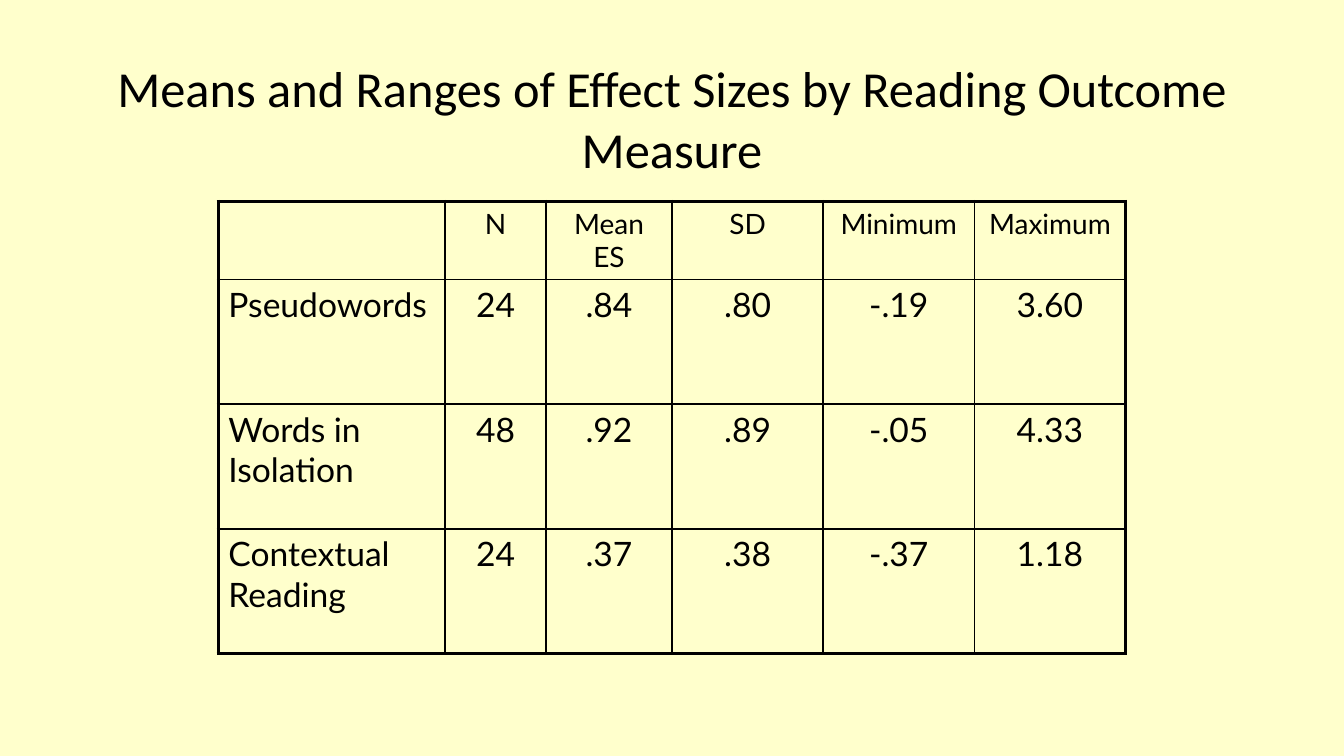
from lxml import etree
from pptx import Presentation
from pptx.dml.color import RGBColor
from pptx.enum.text import MSO_ANCHOR, PP_ALIGN
from pptx.oxml.ns import qn
from pptx.util import Pt

LEFT, CENTER = PP_ALIGN.LEFT, PP_ALIGN.CENTER
TOP, MIDDLE = MSO_ANCHOR.TOP, MSO_ANCHOR.MIDDLE
TITLE_ONLY = 5

COLORS = {"background": "FFFFCC", "ink": "000000"}
TITLE_FONT, TABLE_FONT = "Calibri", "Lato"
OUTER, INNER = 2.25, 1  # border widths

COL_WIDTHS = [121.5, 54, 67.5, 81, 81, 81]
ROW_HEIGHTS = [41.7, 66.8, 66.8, 66.8]
ROWS = [
    ["", "N", "Mean ES", "SD", "Minimum", "Maximum"],
    ["Pseudowords", "24", ".84", ".80", "-.19", "3.60"],
    ["Words in Isolation", "48", ".92", ".89", "-.05", "4.33"],
    ["Contextual Reading", "24", ".37", ".38", "-.37", "1.18"],
]


def color(name):
    return RGBColor.from_string(COLORS[name])


def format_paragraph(p, font, size, align):
    p.alignment = align
    p.font.name = font
    p.font.size = Pt(size)
    p.font.bold = False
    p.font.color.rgb = color("ink")


def set_borders(cell, widths):
    """Draw the cell's borders; widths are keyed L, R, T, B in that order."""
    tc_pr = cell._tc.get_or_add_tcPr()
    for side, width in widths.items():
        ln = etree.SubElement(tc_pr, qn(f"a:ln{side}"), w=str(Pt(width)))
        fill = etree.SubElement(ln, qn("a:solidFill"))
        etree.SubElement(fill, qn("a:srgbClr"), val=COLORS["ink"])


def add_title(s, text, left, top, width, height):
    sp = s.shapes.title
    sp.left, sp.top, sp.width, sp.height = Pt(left), Pt(top), Pt(width), Pt(height)
    tf = sp.text_frame
    tf.text = text
    tf.word_wrap = True
    tf.vertical_anchor = MIDDLE
    format_paragraph(tf.paragraphs[0], TITLE_FONT, 27, CENTER)


def add_effect_table(s, left, top, width, height):
    last_row, last_col = len(ROWS) - 1, len(COL_WIDTHS) - 1
    table = s.shapes.add_table(len(ROWS), len(COL_WIDTHS), Pt(left), Pt(top),
                               Pt(width), Pt(height)).table
    table.first_row = table.horz_banding = False

    # Columns and rows share the box in fixed proportions
    for col, share in zip(table.columns, COL_WIDTHS):
        col.width = Pt(width * share / sum(COL_WIDTHS))
    for row, share in zip(table.rows, ROW_HEIGHTS):
        row.height = Pt(height * share / sum(ROW_HEIGHTS))

    for i, values in enumerate(ROWS):
        for j, value in enumerate(values):
            cell = table.cell(i, j)
            cell.text = value
            cell.vertical_anchor = TOP
            cell.margin_left = cell.margin_right = Pt(5.4)
            cell.margin_top = cell.margin_bottom = Pt(2.7)
            set_borders(cell, {
                "L": OUTER if j == 0 else INNER,
                "R": OUTER if j == last_col else INNER,
                "T": OUTER if i == 0 else INNER,
                "B": OUTER if i == last_row else INNER,
            })
            cell.fill.background()
            format_paragraph(cell.text_frame.paragraphs[0], TABLE_FONT,
                             15 if i == 0 else 18, LEFT if j == 0 else CENTER)


def main():
    prs = Presentation()
    prs.slide_width, prs.slide_height = Pt(720), Pt(405)
    s = prs.slides.add_slide(prs.slide_layouts[TITLE_ONLY])
    s.background.fill.solid()
    s.background.fill.fore_color.rgb = color("background")

    add_title(s, "Means and Ranges of Effect Sizes by Reading Outcome Measure",
              36, 22.5, 648, 81)
    add_effect_table(s, 117, 108, 486, 242.1)
    prs.save("out.pptx")


if __name__ == "__main__":
    main()
